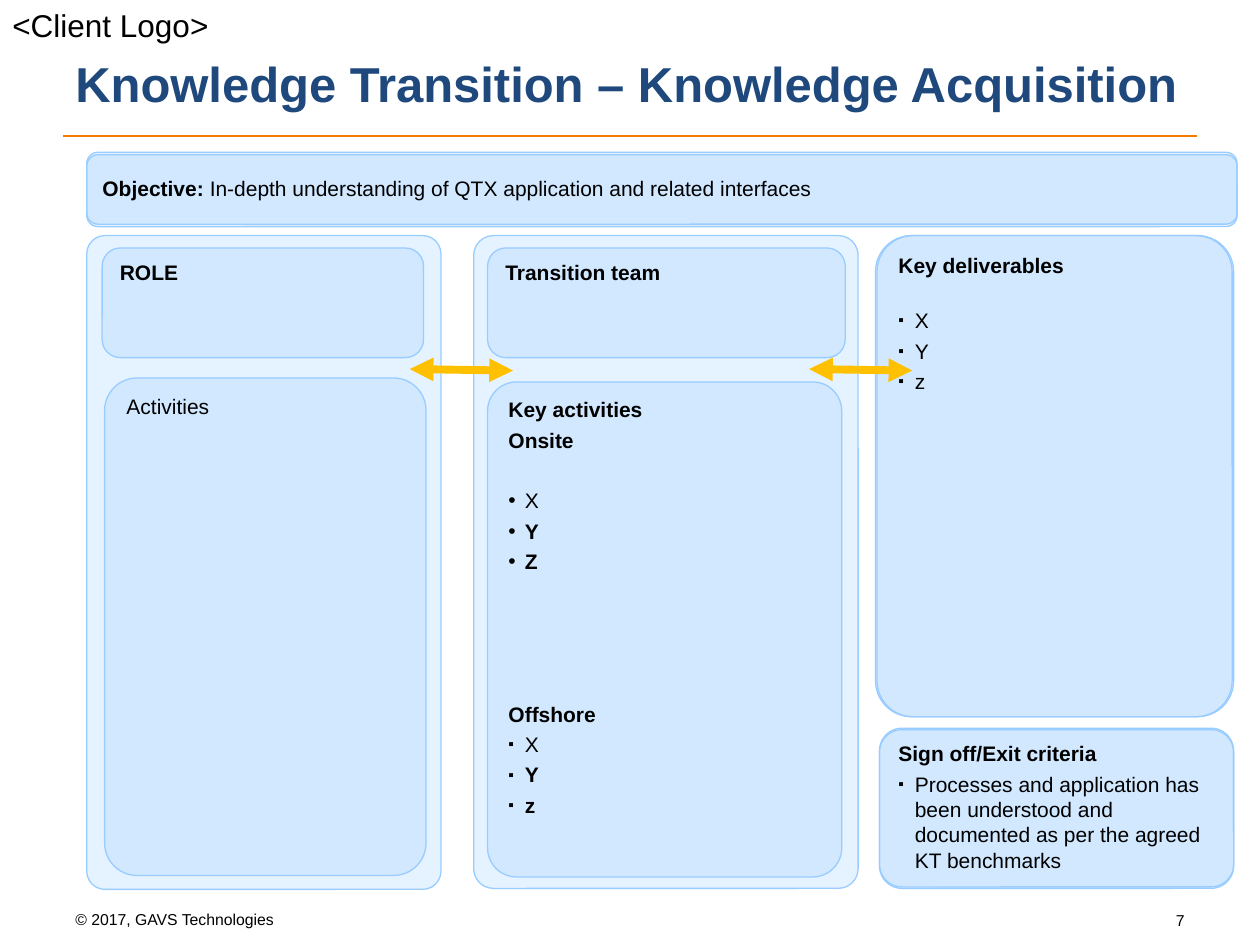
import pptx
import pptx.dml.color
import pptx.enum.dml
import pptx.enum.shapes
import pptx.enum.text
import pptx.oxml
import pptx.oxml.ns
import pptx.util
from lxml import etree

Cm = pptx.util.Cm
Pt = pptx.util.Pt
RGBColor = pptx.dml.color.RGBColor
qn = pptx.oxml.ns.qn
ALIGN = pptx.enum.text.PP_ALIGN
ANCHOR = pptx.enum.text.MSO_ANCHOR

BLACK = RGBColor(0x00, 0x00, 0x00)
PANEL_BLUE = RGBColor(0x99, 0xCC, 0xFF)
TITLE_BLUE = RGBColor(0x1F, 0x49, 0x7D)
RULE_ORANGE = RGBColor(0xF6, 0x7B, 0x00)
ARROW_GOLD = RGBColor(0xFF, 0xC0, 0x00)

deck = pptx.Presentation()
deck.slide_width = Cm(25.4)
deck.slide_height = Cm(19.05)
page = deck.slides.add_slide(deck.slide_layouts[6])


def add_line(start, end, color, width):
    line = page.shapes.add_connector(
        pptx.enum.shapes.MSO_CONNECTOR.STRAIGHT, *map(Cm, start + end))
    line.line.color.rgb = color
    line.line.width = Pt(width)
    etree.SubElement(line._element.spPr, qn("a:effectLst"))
    return line


def fill_text(frame, rows):
    """Rows hold (text, bold, bullet, space before in points)."""
    frame.word_wrap = True
    for number, (text, bold, bullet, space) in enumerate(rows):
        para = frame.paragraphs[0] if number == 0 else frame.add_paragraph()
        para.alignment = ALIGN.LEFT
        if number:
            para.space_before = Pt(space)
        if bullet:
            properties = para._p.get_or_add_pPr()
            properties.set("marL", str(Cm(0.33)))
            properties.set("indent", str(-Cm(0.33)))
            if bullet == "▪":
                color = etree.SubElement(properties, qn("a:buClr"))
                etree.SubElement(color, qn("a:srgbClr"), val=str(BLACK))
                etree.SubElement(properties, qn("a:buSzPct"), val="75000")
            etree.SubElement(properties, qn("a:buFont"), typeface="Arial")
            etree.SubElement(properties, qn("a:buChar"), char=bullet)
        para.add_run().text = text
        para.font.name = "Arial"
        para.font.size = Pt(12)
        para.font.bold = bold
        para.font.color.rgb = BLACK


# Rule under the title
add_line((1.27, 2.74), (24.13, 2.74), RULE_ORANGE, 0.75)

# Text of the panels; wide spaces set the groups apart
deliverables = [("Key deliverables", True, None, 0), ("X", False, "▪", 17.3),
                ("Y", False, "▪", 3), ("z", False, "▪", 3)]
activities = [("Key activities", True, None, 0), ("Onsite", True, None, 3),
              ("X", False, "•", 20.4), ("Y", True, "•", 3), ("Z", True, "•", 3),
              ("Offshore", True, None, 72.6),
              ("X", False, "▪", 3), ("Y", True, "▪", 3), ("z", True, "▪", 3)]
sign_off = [("Sign off/Exit criteria", True, None, 0),
            ("Processes and application has been understood and documented "
             "as per the agreed KT benchmarks", False, "▪", 3)]

# Translucent panels: left, top, width, height, corner, text
panels = [
    (1.75, 4.75, 7.14, 13.18, 0.051, []),
    (9.55, 4.75, 7.75, 13.16, 0.051, []),
    (2.06, 5.0, 6.48, 2.21, 0.166, [("ROLE", True, None, 0)]),
    (2.11, 7.62, 6.48, 10.03, 0.101, [("Activities", False, None, 0)]),
    (9.83, 5.0, 7.21, 2.21, 0.166, [("Transition team", True, None, 0)]),
    (17.68, 4.75, 7.19, 9.7, 0.101, []),
    (17.65, 4.75, 7.19, 9.7, 0.101, deliverables),
    (9.83, 7.7, 7.14, 9.98, 0.082, activities),
    (17.73, 14.71, 7.14, 3.2, 0.142, []),
    (17.73, 14.68, 7.14, 3.2, 0.142, sign_off),
    (1.75, 3.12, 23.19, 1.45, 0.156, []),
    (1.75, 3.07, 23.19, 1.45, 0.156, [("Objective: ", None, None, 0)]),
]
for left, top, width, height, corner, rows in panels:
    panel = page.shapes.add_shape(
        pptx.enum.shapes.MSO_SHAPE.ROUNDED_RECTANGLE,
        Cm(left), Cm(top), Cm(width), Cm(height))
    panel.adjustments[0] = corner
    panel.shadow.inherit = False
    panel.fill.solid()
    panel.fill.fore_color.rgb = PANEL_BLUE
    tint = panel._element.spPr.find(qn("a:solidFill")).find(qn("a:srgbClr"))
    etree.SubElement(tint, qn("a:alpha"), val="25000")
    panel.line.color.rgb = PANEL_BLUE
    panel.line.width = Pt(0.75)
    panel.text_frame.vertical_anchor = ANCHOR.TOP
    fill_text(panel.text_frame, rows)

# The objective is the last panel: bold label, plain statement
panel.text_frame.vertical_anchor = ANCHOR.MIDDLE
objective = panel.text_frame.paragraphs[0]
objective.runs[0].font.bold = True
span = objective.add_run()
span.text = "In-depth understanding of QTX application and related interfaces"
span.font.bold = False

# Double-headed arrows between the columns
for left in (8.26, 16.31):
    arrow = add_line((left, 7.44), (left + 2.08, 7.47), ARROW_GOLD, 4.5)
    outline = arrow.line._get_or_add_ln()
    for end in ("a:headEnd", "a:tailEnd"):
        etree.SubElement(outline, qn(end), type="triangle")

# Title, client mark, footer and page number
labels = [
    ("Knowledge Transition – Knowledge Acquisition",
     1.27, 0.56, 22.86, 2.21, 28, True, TITLE_BLUE, ALIGN.LEFT, ANCHOR.MIDDLE),
    ("<Client Logo>",
     0, 0, 6.35, 1.02, 18, False, BLACK, ALIGN.LEFT, ANCHOR.TOP),
    ("© 2017, GAVS Technologies",
     1.27, 18.21, 7.82, 0.64, 9, False, BLACK, ALIGN.LEFT, ANCHOR.TOP),
    ("7", 18.21, 18.24, 5.92, 1.02, 9, False, BLACK, ALIGN.RIGHT, ANCHOR.TOP),
]
for text, left, top, width, height, size, bold, color, align, anchor in labels:
    box = page.shapes.add_textbox(Cm(left), Cm(top), Cm(width), Cm(height))
    box.text_frame.word_wrap = True
    box.text_frame.vertical_anchor = anchor
    para = box.text_frame.paragraphs[0]
    para.text = text
    para.alignment = align
    para.font.name = "Arial"
    para.font.size = Pt(size)
    para.font.bold = bold
    para.font.color.rgb = color

deck.save("out.pptx")
